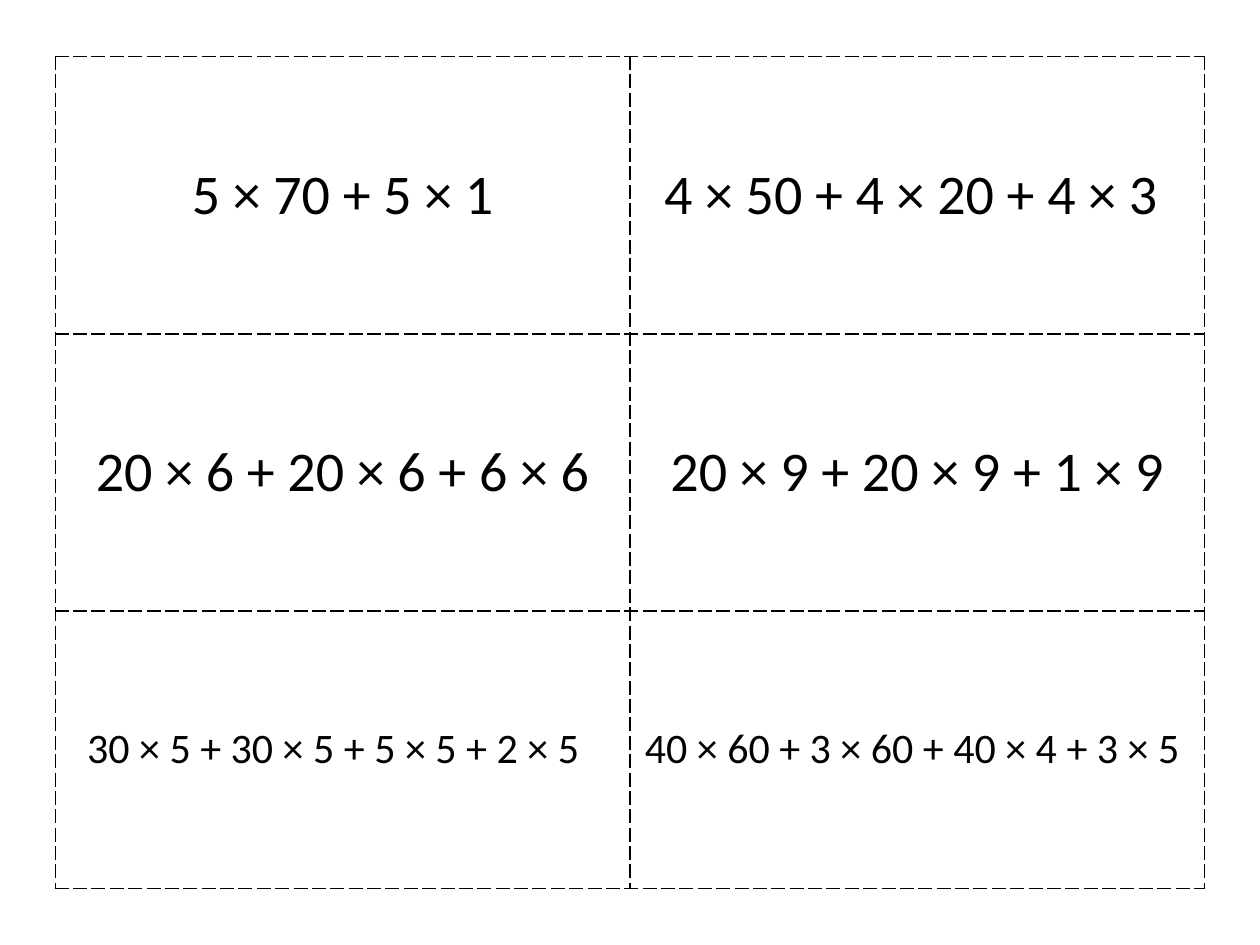
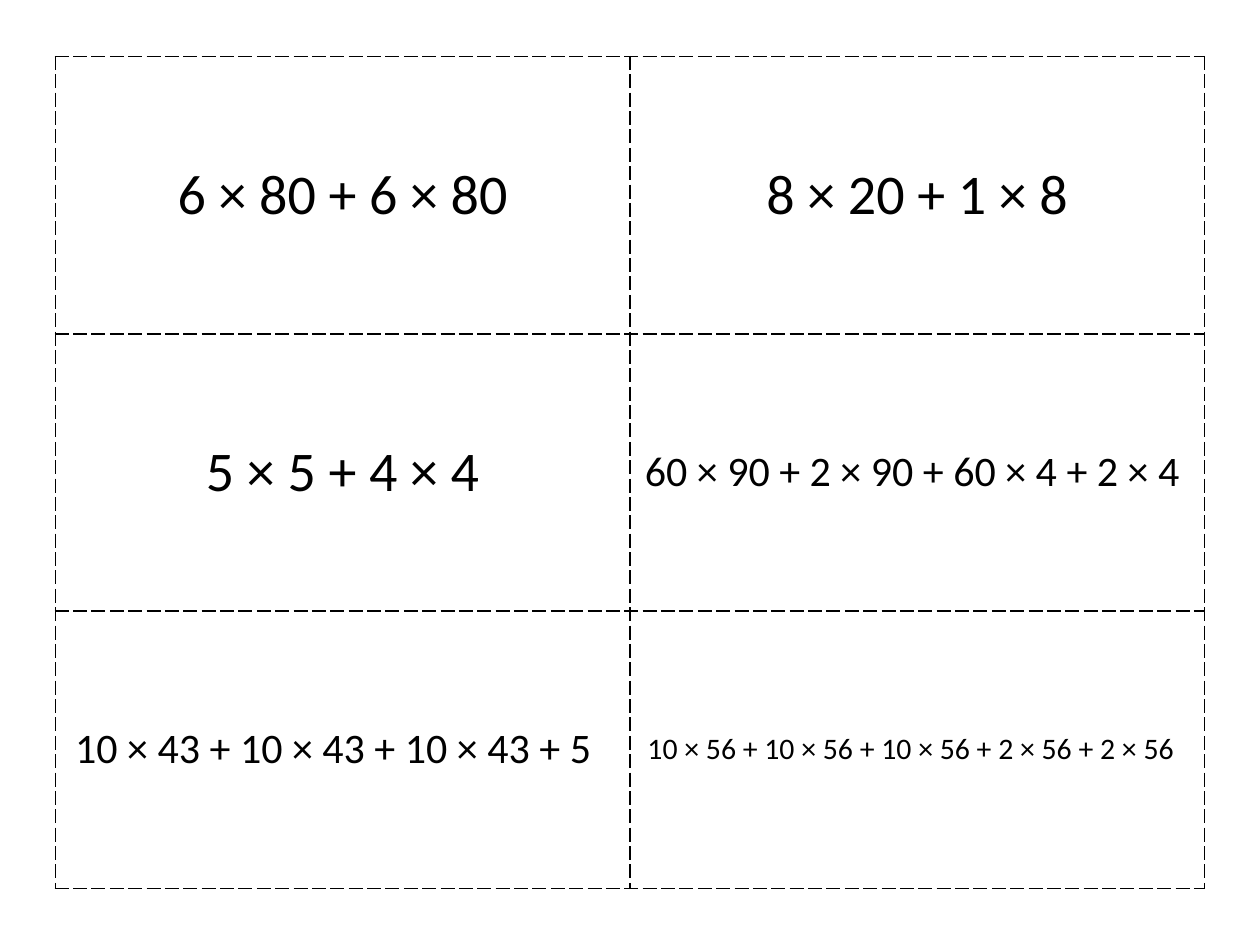
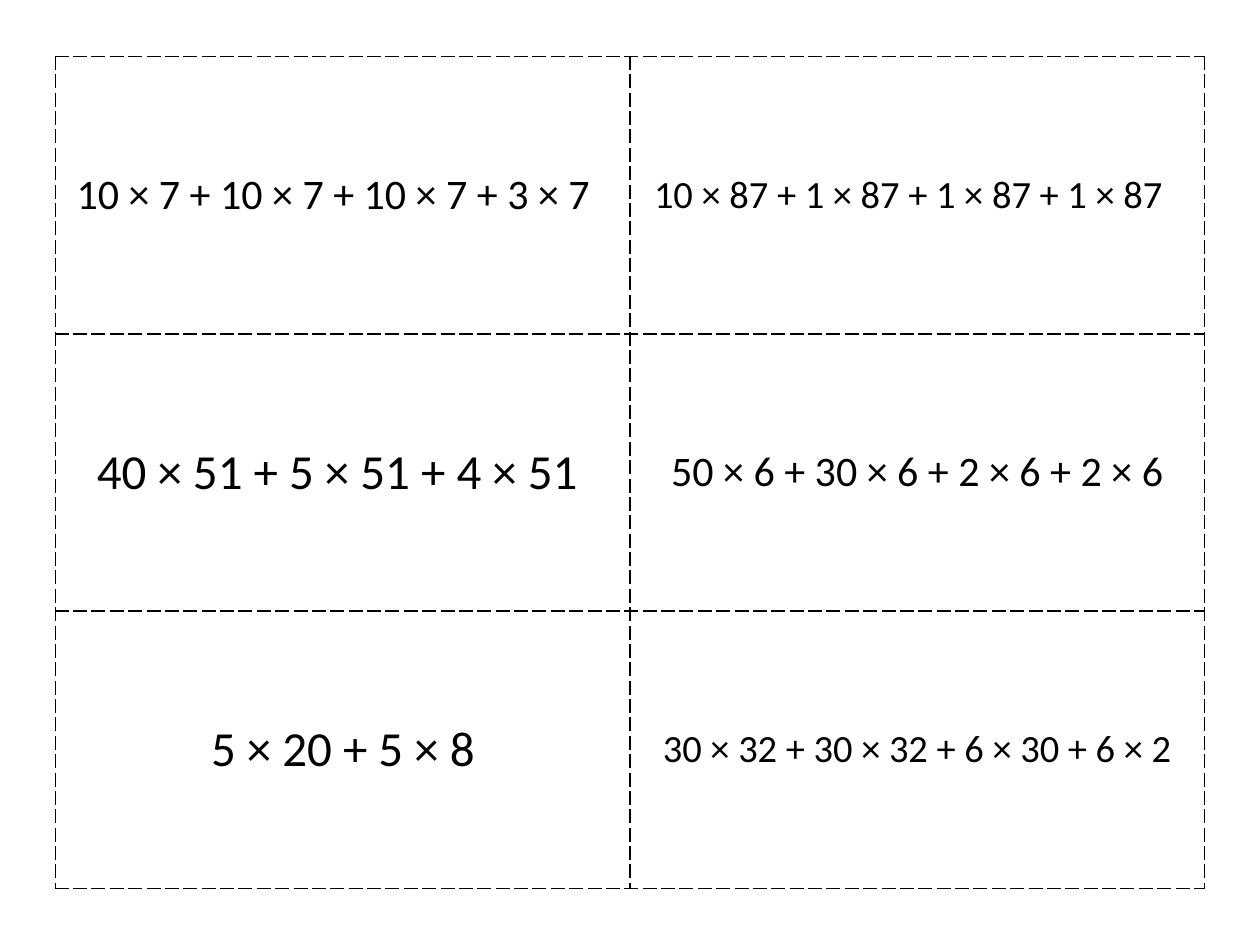
from dataclasses import dataclass

from lxml.etree import SubElement
from pptx import Presentation
from pptx.dml.color import RGBColor
from pptx.enum.text import MSO_ANCHOR, PP_ALIGN
from pptx.oxml.ns import qn
from pptx.util import Inches, Pt

PX = Inches(1) // 100


@dataclass(frozen=True)
class Theme:
    font: str = "Calibri"
    ink: str = "000000"
    border_width: int = Pt(1)
    border_dash: str = "lgDash"
    huge: int = 32
    large: int = 28
    medium: int = 24
    small: int = 22
    tiny: int = 17


THEME = Theme()

SLIDE_W, SLIDE_H = 1000, 750
GRID_LEFT, GRID_TOP = 44, 45
CARD_W, CARD_H = 456, 220
CARD_COLS = 2
CARD_INSET = 10

# Each card: expression, type size, extra right inset in px
CARD_SHEETS = [
    [
        ("5 × 70 + 5 × 1", THEME.huge, 0),
        ("4 × 50 + 4 × 20 + 4 × 3", THEME.huge, 10),
        ("20 × 6 + 20 × 6 + 6 × 6", THEME.huge, 0),
        ("20 × 9 + 20 × 9 + 1 × 9", THEME.huge, 0),
        ("30 × 5 + 30 × 5 + 5 × 5 + 2 × 5", THEME.medium, 15),
        ("40 × 60 + 3 × 60 + 40 × 4 + 3 × 5", THEME.medium, 8),
    ],
    [
        ("6 × 80 + 6 × 80", THEME.huge, 0),
        ("8 × 20 + 1 × 8", THEME.huge, 0),
        ("5 × 5 + 4 × 4", THEME.huge, 0),
        ("60 × 90 + 2 × 90 + 60 × 4 + 2 × 4", THEME.medium, 8),
        ("10 × 43 + 10 × 43 + 10 × 43 + 5", THEME.medium, 15),
        ("10 × 56 + 10 × 56 + 10 × 56 + 2 × 56 + 2 × 56", THEME.tiny, 10),
    ],
    [
        ("10 × 7 + 10 × 7 + 10 × 7 + 3 × 7", THEME.medium, 15),
        ("10 × 87 + 1 × 87 + 1 × 87 + 1 × 87", THEME.small, 14),
        ("40 × 51 + 5 × 51 + 4 × 51", THEME.large, 9),
        ("50 × 6 + 30 × 6 + 2 × 6 + 2 × 6", THEME.medium, 0),
        ("5 × 20 + 5 × 8", THEME.large, 0),
        ("30 × 32 + 30 × 32 + 6 × 30 + 6 × 2", THEME.small, 0),
    ],
]


def write_text(tf, text, *, size, color=THEME.ink, font=THEME.font,
               align=PP_ALIGN.CENTER):
    p = tf.paragraphs[0]
    p.alignment = align
    r = p.add_run()
    r.text = text
    r.font.name = font
    r.font.size = Pt(size)
    r.font.bold = False
    r.font.color.rgb = RGBColor.from_string(color)


def add_cut_lines(cell):
    """Put a dashed border on all four sides; call before filling the cell."""
    tc_pr = cell._tc.get_or_add_tcPr()
    for side in ("lnL", "lnR", "lnT", "lnB"):
        ln = SubElement(tc_pr, qn(f"a:{side}"), w=str(THEME.border_width))
        fill = SubElement(ln, qn("a:solidFill"))
        SubElement(fill, qn("a:srgbClr"), val=THEME.ink)
        SubElement(ln, qn("a:prstDash"), val=THEME.border_dash)


def format_card(cell, text, size, extra_inset):
    add_cut_lines(cell)
    cell.fill.background()
    cell.vertical_anchor = MSO_ANCHOR.MIDDLE
    cell.margin_left = CARD_INSET * PX
    cell.margin_right = (CARD_INSET + extra_inset) * PX
    write_text(cell.text_frame, text, size=size)


def add_card_grid(s, cards):
    rows = len(cards) // CARD_COLS
    table = s.shapes.add_table(
        rows, CARD_COLS, GRID_LEFT * PX, GRID_TOP * PX,
        CARD_COLS * CARD_W * PX, rows * CARD_H * PX).table
    table.first_row = False
    table.horz_banding = False
    for cell, card in zip(table.iter_cells(), cards):
        format_card(cell, *card)


def main():
    prs = Presentation()
    prs.slide_width = SLIDE_W * PX
    prs.slide_height = SLIDE_H * PX
    blank = prs.slide_layouts[6]
    for cards in CARD_SHEETS:
        add_card_grid(prs.slides.add_slide(blank), cards)
    prs.save("out.pptx")


if __name__ == "__main__":
    main()
